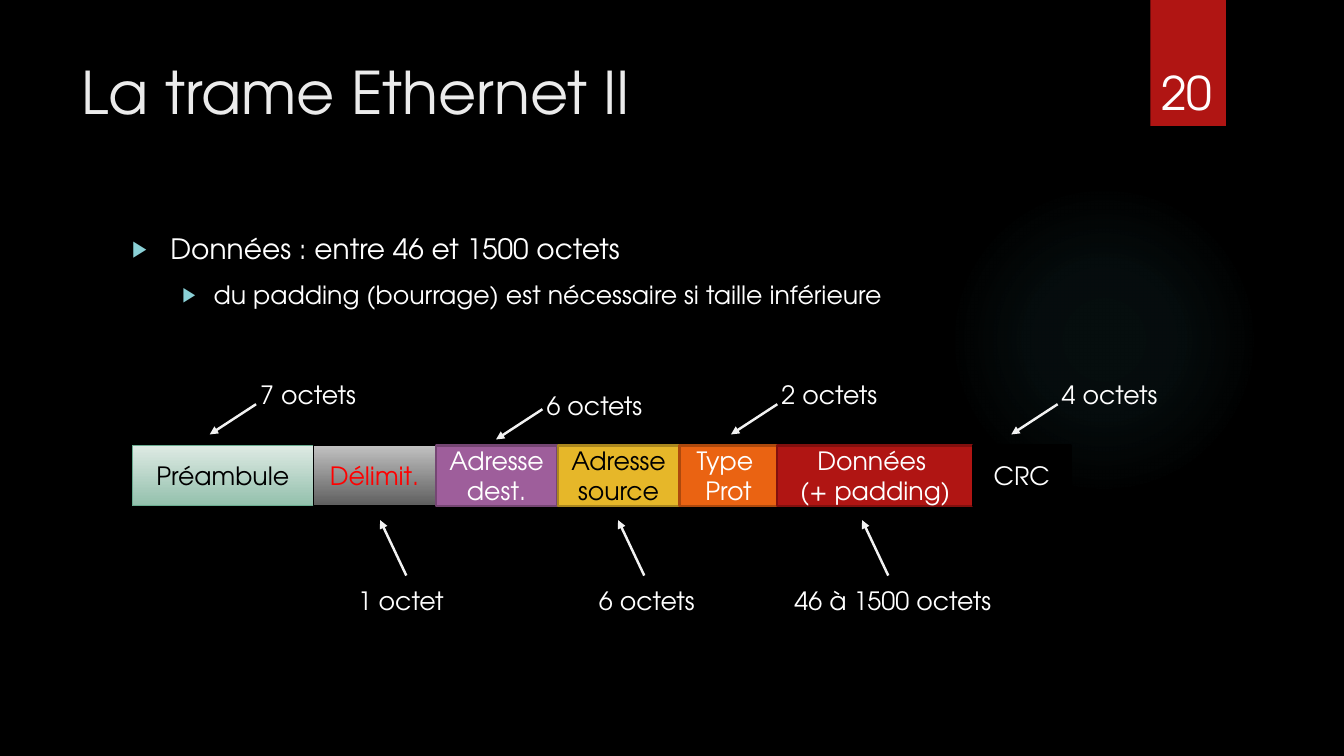
from lxml import etree
from pptx import Presentation, util as u
from pptx.dml.color import RGBColor
from pptx.enum import shapes, text
from pptx.oxml import ns

WHITE, BLACK, RED = "FFFFFF", "000000", "B01513"
ALIGN = text.PP_ALIGN


def colour(value):
    return RGBColor.from_string(value)


def add_xml(parent, tag, **attributes):
    return etree.SubElement(parent, ns.qn(tag), attributes)


class SlideBuilder:
    font = "TeX Gyre Adventor"
    bullet_colour = "8AD0D6"

    def __init__(self, presentation):
        self.slide = presentation.slides.add_slide(presentation.slide_layouts[1])
        self.slide.background.fill.solid()
        self.slide.background.fill.fore_color.rgb = colour(BLACK)

    def add_text(self, paragraph, content, size, ink=WHITE, align=ALIGN.LEFT):
        paragraph.alignment = align
        run = paragraph.add_run()
        run.text = content
        run.font.name = self.font
        run.font.size = u.Pt(size)
        run.font.color.rgb = colour(ink)

    def place(self, shape, left, top, width, height):
        shape.left, shape.top = u.Inches(left), u.Inches(top)
        shape.width, shape.height = u.Inches(width), u.Inches(height)
        frame = shape.text_frame
        frame.word_wrap = True
        frame.auto_size = text.MSO_AUTO_SIZE.NONE
        frame.vertical_anchor = text.MSO_ANCHOR.TOP
        return frame

    def title(self, content, box):
        frame = self.place(self.slide.shapes.title, *box)
        self.add_text(frame.paragraphs[0], content, 42, "EBEBEB")

    def bullets(self, items, box):
        frame = self.place(self.slide.placeholders[1], *box)
        for index, (level, content, size, margin, hanging) in enumerate(items):
            paragraph = frame.add_paragraph() if index else frame.paragraphs[0]
            paragraph.level = level
            paragraph.space_before = u.Pt(10 if index else 0)
            properties = paragraph._p.get_or_add_pPr()
            properties.set("marL", str(u.Inches(margin)))
            properties.set("indent", str(u.Inches(-hanging)))
            add_xml(add_xml(properties, "a:buClr"), "a:srgbClr", val=self.bullet_colour)
            add_xml(properties, "a:buSzPct", val="80000")
            add_xml(properties, "a:buChar", char="▶")
            self.add_text(paragraph, content, size)

    def label(self, content, left, top, width, height, size=18, align=ALIGN.CENTER):
        box = self.slide.shapes.add_textbox(0, 0, 0, 0)
        frame = self.place(box, left, top, width, height)
        self.add_text(frame.paragraphs[0], content, size, align=align)

    def shape(self, kind, left, top, width, height, fill, line=None, line_width=1.5):
        shape = self.slide.shapes.add_shape(
            kind, *(u.Inches(v) for v in (left, top, width, height)))
        shape.shadow.inherit = False
        if isinstance(fill, str):
            shape.fill.solid()
            shape.fill.fore_color.rgb = colour(fill)
        else:
            self.gradient(shape, fill, radial=kind == shapes.MSO_SHAPE.OVAL)
        if line:
            shape.line.color.rgb = colour(line)
            shape.line.width = u.Pt(line_width)
        else:
            shape.line.fill.background()
        return shape

    def gradient(self, shape, stops, radial):
        shape.fill.gradient()
        element = shape._element.spPr.find(ns.qn("a:gradFill"))
        for child in list(element):
            element.remove(child)
        stop_list = add_xml(element, "a:gsLst")
        for position, value, opacity in stops:
            stop = add_xml(stop_list, "a:gs", pos=str(position * 1000))
            rgb = add_xml(stop, "a:srgbClr", val=value)
            if opacity < 100:
                add_xml(rgb, "a:alpha", val=str(opacity * 1000))
        if radial:
            centre = dict.fromkeys("ltrb", "50000")
            add_xml(add_xml(element, "a:path", path="circle"), "a:fillToRect", **centre)
        else:
            add_xml(element, "a:lin", ang="5400000", scaled="0")

    def field(self, lines, left, width, fill, line, ink, line_width):
        shape = self.shape(shapes.MSO_SHAPE.RECTANGLE, left, 4.42, width, 0.6,
                           fill, line, line_width)
        frame = shape.text_frame
        frame.word_wrap = True
        frame.vertical_anchor = text.MSO_ANCHOR.MIDDLE
        for index, content in enumerate(lines):
            paragraph = frame.add_paragraph() if index else frame.paragraphs[0]
            self.add_text(paragraph, content, 18, ink, ALIGN.CENTER)

    def arrow(self, start, tip):
        connector = self.slide.shapes.add_connector(
            shapes.MSO_CONNECTOR.STRAIGHT, *(u.Inches(v) for v in (*start, *tip)))
        connector.line.color.rgb = colour("F2F2F2")
        connector.line.width = u.Pt(1.75)
        add_xml(connector.line._get_or_add_ln(), "a:tailEnd", type="triangle")
        add_xml(connector._element.spPr, "a:effectLst")


def main():
    presentation = Presentation()
    presentation.slide_width, presentation.slide_height = u.Inches(13.33), u.Inches(7.5)
    builder = SlideBuilder(presentation)

    # Background glow and page number tab
    glow = [(0, "50B9C1", 7), (36, "50B9C1", 6), (69, "50B9C1", 0), (100, "50B9C1", 0)]
    builder.shape(shapes.MSO_SHAPE.OVAL, 9.41, 1.83, 3.08, 3.08, glow)
    builder.shape(shapes.MSO_SHAPE.RECTANGLE, 11.41, 0, 0.75, 1.25, RED)
    builder.label("20", 11.42, 0.59, 0.78, 0.66, 33, ALIGN.LEFT)

    # Title and list
    builder.title("La trame Ethernet II", (0.71, 0.5, 10.29, 1.53))
    builder.bullets([
        (0, "Données : entre 46 et 1500 octets", 20, 0.38, 0.38),
        (1, "du padding (bourrage) est nécessaire si taille inférieure", 18, 0.81, 0.31),
    ], (1.21, 2.25, 9.78, 4.59))

    # Frame fields, laid side by side
    green = [(0, "DEEAE4", 100), (100, "93C0AC", 100)]
    grey = [(0, "C1C1C1", 100), (100, "5E5E5E", 100)]
    fields = [
        (["Préambule"], 1.8, green, "6AAC90", BLACK, 0.75),
        (["Délimit."], 1.21, grey, BLACK, "FF0000", 0.75),
        (["Adresse dest."], 1.21, "9E5E9B", "754673", WHITE, 1.5),
        (["Adresse source"], 1.21, "E6B729", "AA871E", BLACK, 1.5),
        (["Type ", "Prot"], 0.97, "EA6312", "AD490D", WHITE, 1.5),
        (["Données ", "(+ padding)"], 1.94, RED, "82100E", WHITE, 1.5),
        (["CRC"], 0.97, BLACK, BLACK, WHITE, 1.5),
    ]
    left = 1.31
    for lines, width, *style in fields:
        builder.field(lines, left, width, *style)
        left += width

    # Sizes above the frame: label position follows the arrow tip
    for content, tip_x, tip_y, label_top in [
        ("7 octets", 2.08, 4.31, 3.71),
        ("6 octets", 4.92, 4.36, 3.82),
        ("2 octets", 7.25, 4.31, 3.71),
        ("4 octets", 10.03, 4.31, 3.71),
    ]:
        builder.arrow((tip_x + 0.46, tip_y - 0.3), (tip_x, tip_y))
        builder.label(content, tip_x - 0.3, label_top, 2.55, 0.4)

    # Sizes below the frame: labels are evenly spaced
    for index, (content, tip_x) in enumerate([
        ("1 octet", 3.77), ("6 octets", 6.13), ("46 à 1500 octets", 8.55),
    ]):
        builder.arrow((tip_x + 0.26, 5.71), (tip_x, 5.16))
        builder.label(content, 2.7 + index * 2.44, 5.76, 2.55, 0.4)

    presentation.save("out.pptx")


if __name__ == "__main__":
    main()
